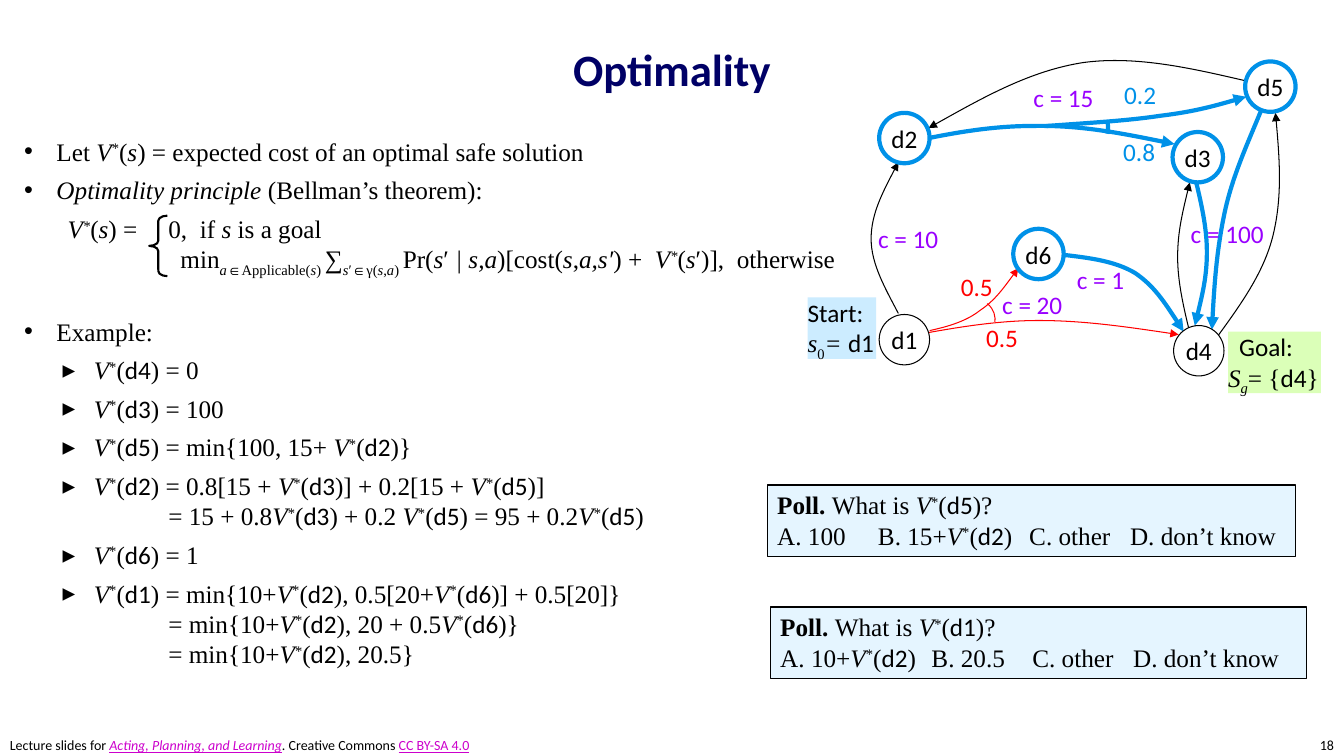
from dataclasses import dataclass

from lxml.etree import SubElement
from pptx import Presentation
from pptx.dml.color import RGBColor
from pptx.enum.shapes import MSO_SHAPE as Preset
from pptx.enum.text import MSO_ANCHOR as Anchor, MSO_AUTO_SIZE as AutoSize, PP_ALIGN as Align
from pptx.oxml.ns import qn
from pptx.util import Inches, Pt


@dataclass(frozen=True)
class Theme:
    serif: str = "Times New Roman"
    sans: str = "Calibri"
    title_size: int = 32
    text_size: int = 18
    footer_size: int = 10
    thin: float = 0.75
    thick: float = 3
    black: str = "000000"
    white: str = "FFFFFF"
    navy: str = "000066"
    blue: str = "0091E8"
    red: str = "FF0000"
    purple: str = "9900FF"
    link: str = "CC00CC"
    poll: str = "E5F5FF"
    start: str = "CCECFF"
    goal: str = "DBFFB8"


THEME = Theme()
PLAIN, RISKY, BEST = (THEME.black, THEME.thin), (THEME.red, THEME.thin), (THEME.blue, THEME.thick)
# Each mark switches one style on and off inside a text
MARKS = {"_": "italic", "^": "super", "~": "sub", "`": "sans", "#": "bold", "@": "link"}

NODES = [("d1", 8.72, 3.12, PLAIN), ("d2", 8.72, 1.12, BEST), ("d3", 11.63, 1.31, BEST),
         ("d4", 11.64, 3.23, PLAIN), ("d5", 12.35, 0.61, BEST), ("d6", 10.05, 2.27, BEST)]

# Line style, start point, then Bezier points up to the arrowhead
EDGES = [
    (PLAIN, (8.91, 3.11), (8.78, 2.86), (8.64, 2.62), (8.64, 2.37), (8.64, 2.12), (8.78, 1.86), (8.91, 1.61)),
    (RISKY, (8.99, 3.34), (9.42, 3.26), (9.86, 3.18), (10.3, 3.18), (10.75, 3.18), (11.22, 3.25), (11.69, 3.32)),
    (RISKY, (9.22, 3.28), (9.4, 3.24), (9.58, 3.19), (9.72, 3.08), (9.87, 2.98), (9.98, 2.82), (10.1, 2.66)),
    (BEST, (10.56, 2.53), (10.81, 2.56), (11.06, 2.59), (11.26, 2.71), (11.45, 2.84), (11.59, 3.06), (11.74, 3.29)),
    (PLAIN, (12.39, 0.81), (11.83, 0.68), (11.28, 0.55), (10.75, 0.62), (10.22, 0.7), (9.71, 0.99), (9.21, 1.27)),
    (BEST, (8.89, 1.44), (9.33, 1.34), (9.78, 1.25), (10.24, 1.25), (10.7, 1.24), (11.17, 1.33), (11.65, 1.43)),
    (BEST, (10.38, 1.25), (10.78, 1.22), (11.17, 1.2), (11.5, 1.15), (11.83, 1.11), (12.09, 1.04), (12.36, 0.96)),
    (PLAIN, (11.8, 3.3), (11.74, 3.05), (11.68, 2.8), (11.68, 2.55), (11.68, 2.3), (11.74, 2.06), (11.8, 1.81)),
    (BEST, (12.51, 1.09), (12.38, 1.41), (12.23, 1.73), (12.15, 2.09), (12.07, 2.46), (12.04, 2.86), (12.02, 3.27)),
    (PLAIN, (12.03, 3.4), (12.27, 3.07), (12.52, 2.74), (12.62, 2.36), (12.72, 1.97), (12.69, 1.55), (12.65, 1.12)),
    (BEST, (11.85, 1.75), (11.91, 2), (11.97, 2.25), (11.97, 2.5), (11.97, 2.74), (11.91, 2.99), (11.85, 3.23)),
]
EDGE_LABELS = [
    ("c = 20", 9.94, 2.87, 0.6, THEME.purple), ("c = 1", 10.68, 2.62, 0.47, THEME.purple),
    ("c = 15", 10.25, 0.82, 0.6, THEME.purple), ("c = 100", 11.81, 2.17, 0.73, THEME.purple),
    ("c = 10", 8.71, 2.22, 0.6, THEME.purple), ("0.5", 9.53, 2.69, 0.32, THEME.red),
    ("0.5", 9.78, 3.2, 0.32, THEME.red), ("0.2", 11.15, 0.79, 0.32, THEME.blue),
    ("0.8", 11.14, 1.35, 0.32, THEME.blue),
]
V1, V2, V3, V4, V5, V6 = (f"_V_^*^(`d{number}`)" for number in range(1, 7))
POLLS = [((7.61, 4.81, 5.24, 0.71), V5, f"A. 100\tB. 15+{V2}\tC. other\tD. don’t know", (0.93, 2.52, 3.57)),
         ((7.64, 6.02, 5.32, 0.71), V1, f"A. 10+{V2}\tB. 20.5\tC. other\tD. don’t know", (1.6, 2.57, 3.63))]

# Paragraph kinds: level, space before, left indent, first-line indent, bullet, tab stops
KINDS = {
    "point": (0, 6, 0.32, -0.32, "•"), "after formula": (0, 27, 0.32, -0.32, "•"),
    "formula": (1, 6, 0.43, 0, None, [1.55]), "formula end": (1, 0, 1.55),
    "example": (1, 6, 0.69, -0.31, "▸"), "example end": (1, 0, 1.43),
}
BODY = [
    ("point", "Let _V_^*^(_s_) = expected cost of an optimal safe solution"),
    ("point", "_Optimality principle _(Bellman’s theorem):"),
    ("formula", "_V^*^_(_s_) =\t0,  if _s_ is a goal"),
    ("formula end", "min~_a_∈Applicable(_s_) ~∑~_s_′∈γ(_s_,_a_) ~Pr(_s_′ _| s,a_)"
                    "[cost(_s_,_a,s′_) +  _V^*^_(_s_′)],  otherwise"),
    ("after formula", "Example:"),
    ("example", f"{V4} = 0"),
    ("example", f"{V3} = 100"),
    ("example", f"{V5} = min{{100, 15+ {V2}}}"),
    ("example", f"{V2} = 0.8[15 + {V3}] + 0.2[15 + {V5}]"),
    ("example end", f"= 15 + 0.8{V3} + 0.2 {V5} = 95 + 0.2{V5}"),
    ("example", f"{V6} = 1"),
    ("example", f"{V1} = min{{10+{V2}, 0.5[20+{V6}] + 0.5[20]}}"),
    ("example end", f"= min{{10+{V2}, 20 + 0.5{V6}}}"),
    ("example end", f"= min{{10+{V2}, 20.5}}"),
]


def write(paragraph, marked, font=THEME.serif, size=THEME.text_size, color=THEME.black, align=Align.LEFT):
    paragraph.alignment = align
    styles, text = set(), ""
    for char in marked + "#":
        if char not in MARKS:
            text += char
            continue
        if text:
            run = paragraph.add_run()
            run.text = text
            run.font.name = THEME.sans if "sans" in styles else font
            run.font.size = Pt(size)
            run.font.italic, run.font.bold = "italic" in styles, "bold" in styles
            run.font.underline = "link" in styles
            run.font.color.rgb = RGBColor.from_string(THEME.link if "link" in styles else color)
            if styles & {"super", "sub"}:
                run.font._element.set("baseline", "30000" if "super" in styles else "-25000")
        styles, text = styles ^ {MARKS[char]}, ""


def set_layout(paragraph, left=0, first=0, bullet=None, stops=()):
    properties = paragraph._p.get_or_add_pPr()
    properties.set("marL", str(Inches(left)))
    properties.set("indent", str(Inches(first)))
    if bullet:
        SubElement(SubElement(properties, qn("a:buClr")), qn("a:srgbClr"), val=THEME.black)
        SubElement(properties, qn("a:buChar"), char=bullet)
    else:
        SubElement(properties, qn("a:buNone"))
    tabs = SubElement(properties, qn("a:tabLst"))
    for stop in stops:
        SubElement(tabs, qn("a:tab"), pos=str(Inches(stop)), algn="l")


def set_frame(frame, x=0, y=0, wrap=False, anchor=Anchor.TOP):
    frame.margin_left = frame.margin_right = Inches(x)
    frame.margin_top = frame.margin_bottom = Inches(y)
    frame.word_wrap, frame.auto_size, frame.vertical_anchor = wrap, AutoSize.NONE, anchor


def style_shape(shape, fill=None, line=None, width=THEME.thin):
    shape.shadow.inherit = False
    for target, color in ((shape.fill, fill), (shape.line.fill, line)):
        if color:
            target.solid()
            target.fore_color.rgb = RGBColor.from_string(color)
        else:
            target.background()
    if line:
        shape.line.width = Pt(width)


def add_preset(slide, preset, box, fill=None, line=None, width=THEME.thin, adjustments=()):
    shape = slide.shapes.add_shape(preset, *map(Inches, box))
    style_shape(shape, fill, line, width)
    for index, adjustment in enumerate(adjustments):
        shape.adjustments[index] = adjustment
    return shape


def add_label(slide, text, box, color=THEME.black, size=THEME.text_size, x=0, y=0, align=Align.LEFT):
    frame = slide.shapes.add_textbox(*map(Inches, box)).text_frame
    set_frame(frame, x, y)
    write(frame.paragraphs[0], text, THEME.sans, size, color, align)


def add_edge(slide, style, *points):
    points = [(Inches(x), Inches(y)) for x, y in points]
    builder = slide.shapes.build_freeform(*points[0])
    builder.add_line_segments(points[1:], close=False)
    shape = builder.convert_to_shape()
    style_shape(shape, None, *style)
    # Every three segment points become one Bezier curve
    segments = list(shape._element.iter(qn("a:lnTo")))
    outline = segments[0].getparent()
    for start in range(0, len(segments), 3):
        curve = SubElement(outline, qn("a:cubicBezTo"))
        for segment in segments[start:start + 3]:
            curve.append(segment[0])
            outline.remove(segment)
    SubElement(shape.line._get_or_add_ln(), qn("a:tailEnd"), type="triangle")


def add_node(slide, name, left, top, style):
    frame = add_preset(slide, Preset.OVAL, (left, top, 0.5, 0.5), THEME.white, *style).text_frame
    set_frame(frame, anchor=Anchor.MIDDLE)
    write(frame.paragraphs[0], name, THEME.sans, align=Align.CENTER)


def add_panel(slide, lines, box, fill, line=None, x=0, y=0, stops=(), first=0):
    frame = add_preset(slide, Preset.RECTANGLE, box, fill, line, 1).text_frame
    set_frame(frame, x, y, wrap=bool(stops))
    for index, text in enumerate(lines):
        paragraph = frame.add_paragraph() if index else frame.paragraphs[0]
        set_layout(paragraph, first=0 if index else first, stops=stops)
        write(paragraph, text)


def fill_placeholders(title, body):
    for shape, box, anchor in ((title, (0.22, 0.11, 12.89, 0.89), Anchor.BOTTOM),
                               (body, (0.14, 1.3, 9, 5.28), Anchor.TOP)):
        shape.left, shape.top, shape.width, shape.height = map(Inches, box)
        set_frame(shape.text_frame, 0.1, 0.05, True, anchor)
    write(title.text_frame.paragraphs[0], "#Optimality#", THEME.sans, THEME.title_size, THEME.navy, Align.CENTER)
    for index, (kind, text) in enumerate(BODY):
        paragraph = body.text_frame.add_paragraph() if index else body.text_frame.paragraphs[0]
        paragraph.level, before, *layout = KINDS[kind]
        paragraph.space_before = Pt(before)
        set_layout(paragraph, *layout)
        write(paragraph, text)


def main():
    presentation = Presentation()
    presentation.slide_width, presentation.slide_height = Inches(13.33), Inches(7.5)
    slide = presentation.slides.add_slide(presentation.slide_layouts[1])
    # Footer, title and list
    footer = {"size": THEME.footer_size, "x": 0.1, "y": 0.02}
    add_label(slide, "18", (12.97, 7.29, 0.36, 0.21), align=Align.RIGHT, **footer)
    add_label(slide, "Lecture slides for @_Acting, Planning, and Learning_@. Creative Commons @CC BY-SA 4.0@",
              (0, 7.29, 4.97, 0.21), **footer)
    fill_placeholders(slide.shapes.title, slide.placeholders[1])
    add_preset(slide, Preset.LEFT_BRACE, (1.48, 2.14, 0.18, 0.6), None, THEME.black, 1.5, (0.28, 0.5))
    # State graph
    for edge in EDGES:
        add_edge(slide, *edge)
    add_preset(slide, Preset.ARC, (9.47, 2.97, 0.4, 0.4), None, *RISKY, (7.08, 42.52)).rotation = 296
    add_preset(slide, Preset.ARC, (10.87, 1.14, 0.12, 0.25), None, *BEST, (184.96, 29.91))
    for node in NODES:
        add_node(slide, *node)
    for text, left, top, width, color in EDGE_LABELS:
        add_label(slide, text, (left, top, width, 0.3), color)
    add_panel(slide, ["`Goal:`", "_S~g~_= {`d4`}"], (12.18, 3.29, 0.92, 0.61), THEME.goal, first=0.11)
    add_panel(slide, ["`Start:`", "_s_~0~_= _`d1`"], (8.01, 2.95, 0.68, 0.61), THEME.start)
    # Polls
    for box, asked, answers, stops in POLLS:
        add_panel(slide, [f"#Poll. #What is {asked}?", answers], box, THEME.poll, THEME.black, 0.1, 0.05, stops)
    presentation.save("out.pptx")


if __name__ == "__main__":
    main()
